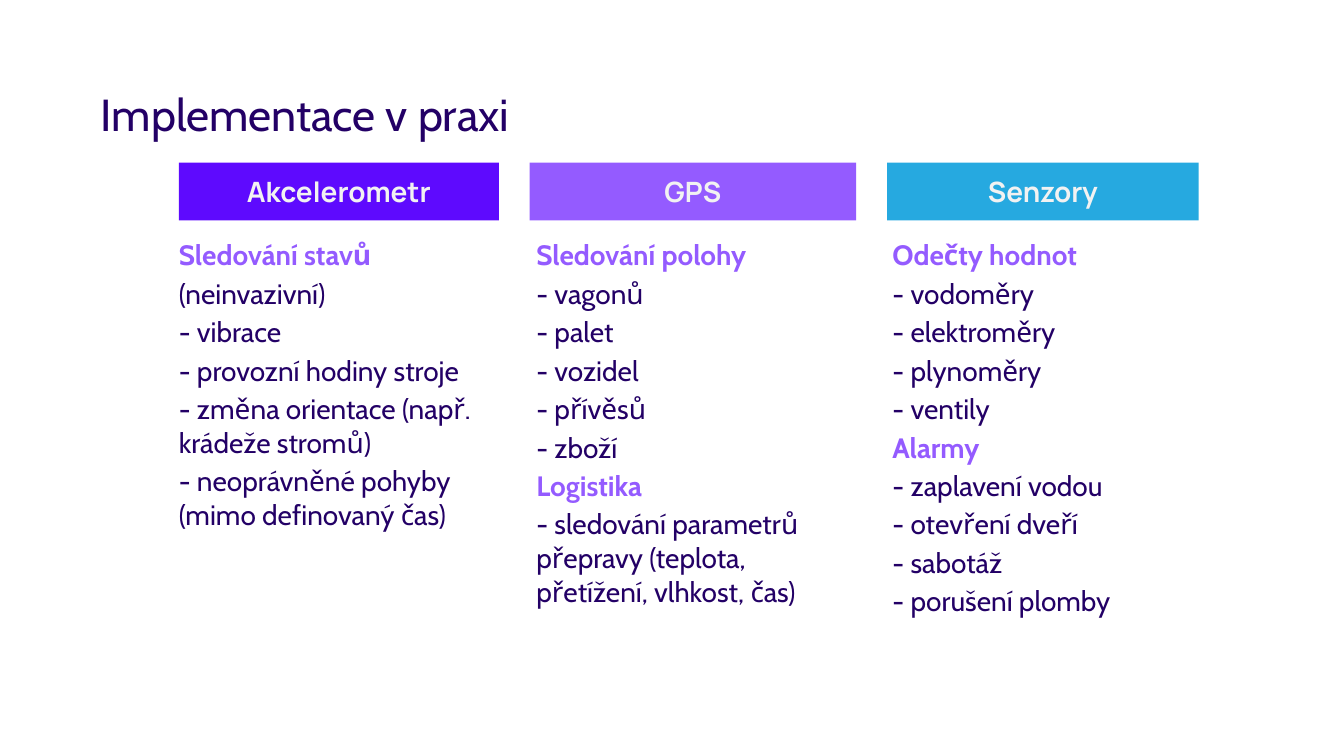
from dataclasses import dataclass

from pptx import Presentation
from pptx.dml.color import RGBColor
from pptx.enum.shapes import MSO_SHAPE
from pptx.enum.text import MSO_ANCHOR, PP_ALIGN
from pptx.util import Pt


@dataclass(frozen=True)
class Theme:
    ink: str = "230066"
    accent: str = "945BFF"
    violet: str = "5E0AFE"
    blue: str = "26A9E0"
    header_ink: str = "F2F2F2"
    body_font: str = "Cabin"
    header_font: str = "Manrope"
    title_size: float = 24
    text_size: float = 15


THEME = Theme()
HEADER_HEIGHT = 31
BODY_OFFSET = 37.4

# Header, colour, left, width, body indent, sections of (heading, lines)
COLUMNS = [
    ("Akcelerometr", THEME.violet, 95.8, 171.4, 0, [
        ("Sledování stavů", [
            "(neinvazivní)", "- vibrace", "- provozní hodiny stroje",
            "- změna orientace (např. krádeže stromů)",
            "- neoprávněné pohyby (mimo definovaný čas)"]),
    ]),
    ("GPS", THEME.accent, 283.7, 175, 3.6, [
        ("Sledování polohy", [
            "- vagonů", "- palet", "- vozidel", "- přívěsů", "- zboží"]),
        ("Logistika", [
            "- sledování parametrů přepravy (teplota, přetížení, vlhkost, čas)"]),
    ]),
    ("Senzory", THEME.blue, 475.2, 167, 2.9, [
        ("Odečty hodnot", [
            "- vodoměry", "- elektroměry", "- plynoměry", "- ventily"]),
        ("Alarmy", [
            "- zaplavení vodou", "- otevření dveří", "- sabotáž",
            "- porušení plomby"]),
    ]),
]


def set_font(paragraph, name, size, color, bold=False):
    font = paragraph.font
    font.name, font.size, font.bold = name, Pt(size), bold
    font.color.rgb = RGBColor.from_string(color)


def set_frame(frame, side, vertical, anchor):
    frame.word_wrap = True
    frame.margin_left = frame.margin_right = Pt(side)
    frame.margin_top = frame.margin_bottom = Pt(vertical)
    frame.vertical_anchor = anchor


def place_title(slide, text, left, top, width, height):
    title = slide.shapes.title
    title.left, title.top = Pt(left), Pt(top)
    title.width, title.height = Pt(width), Pt(height)
    title.text = text
    set_frame(title.text_frame, 7.2, 7.2, MSO_ANCHOR.TOP)
    paragraph = title.text_frame.paragraphs[0]
    paragraph.alignment = PP_ALIGN.LEFT
    paragraph.line_spacing = 0.9
    set_font(paragraph, THEME.body_font, THEME.title_size, THEME.ink)


def add_header(slide, text, color, left, top, width, height):
    header = slide.shapes.add_shape(
        MSO_SHAPE.RECTANGLE, Pt(left), Pt(top), Pt(width), Pt(height))
    header.shadow.inherit = False
    header.fill.solid()
    header.fill.fore_color.rgb = RGBColor.from_string(color)
    header.line.fill.background()
    set_frame(header.text_frame, 0, 6.5, MSO_ANCHOR.MIDDLE)
    paragraph = header.text_frame.paragraphs[0]
    paragraph.text = text
    paragraph.alignment = PP_ALIGN.CENTER
    set_font(paragraph, THEME.header_font, THEME.text_size, THEME.header_ink, True)


def add_body(slide, sections, left, top, width, height):
    body = slide.shapes.add_textbox(Pt(left), Pt(top), Pt(width), Pt(height))
    frame = body.text_frame
    set_frame(frame, 0, 2.9, MSO_ANCHOR.TOP)
    entries = [(text, text == heading)
               for heading, lines in sections for text in [heading, *lines]]
    for index, (text, is_heading) in enumerate(entries):
        paragraph = frame.add_paragraph() if index else frame.paragraphs[0]
        paragraph.text = text
        if index:
            paragraph.space_before = Pt(2.6)
        set_font(paragraph, THEME.body_font, THEME.text_size,
                 THEME.accent if is_heading else THEME.ink, is_heading)


def add_column(slide, column, top, height):
    header, color, left, width, indent, sections = column
    add_header(slide, header, color, left, top, width, HEADER_HEIGHT)
    add_body(slide, sections, left + indent, top + BODY_OFFSET,
             width - indent, height - BODY_OFFSET)


def main():
    presentation = Presentation()
    presentation.slide_width, presentation.slide_height = Pt(720), Pt(405)
    slide = presentation.slides.add_slide(presentation.slide_layouts[5])
    place_title(slide, "Implementace v praxi", 46.8, 42.5, 267, 52.6)
    for column in COLUMNS:
        add_column(slide, column, top=87.1, height=244)
    presentation.save("out.pptx")


if __name__ == "__main__":
    main()
